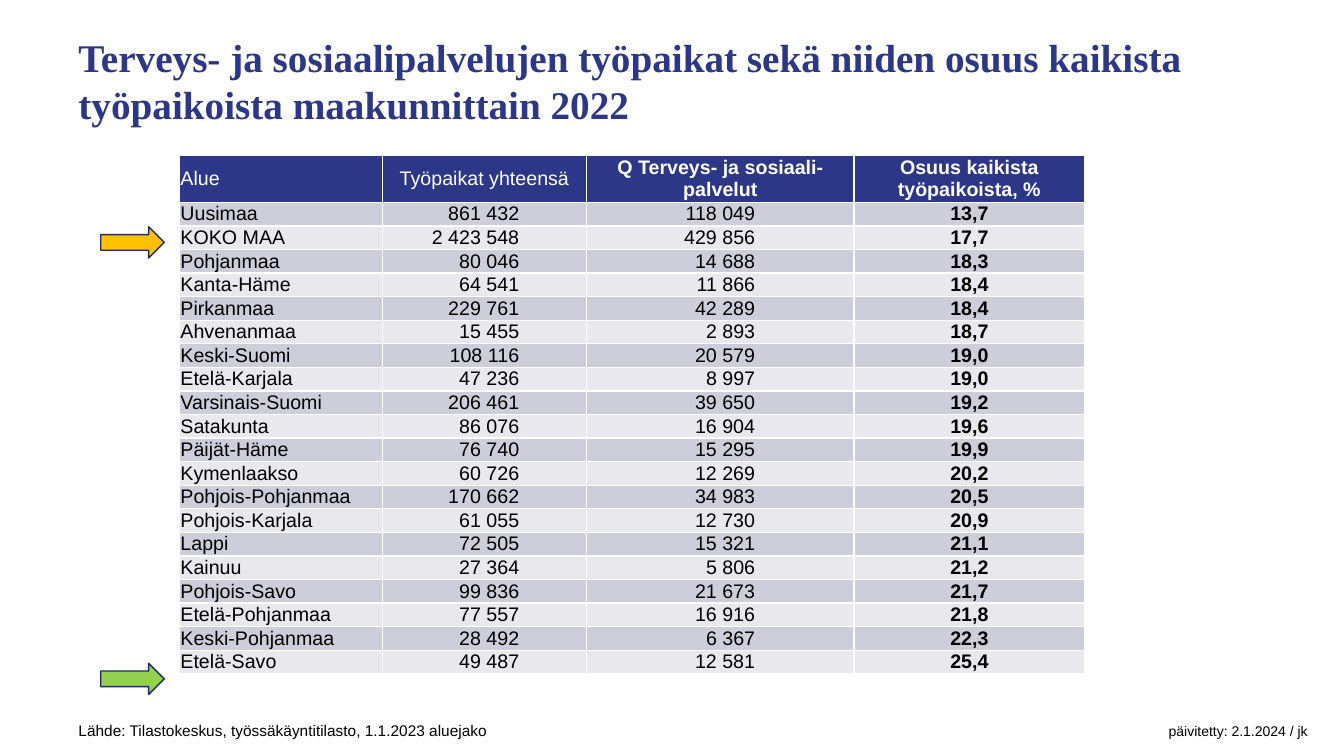
import pptx
import pptx.util
import pptx.dml.color
import pptx.enum.shapes
import pptx.enum.text
import pptx.oxml
import pptx.oxml.ns

Inches, Pt = pptx.util.Inches, pptx.util.Pt
ALIGN = pptx.enum.text.PP_ALIGN
NAVY, WHITE, BLACK = "2D3787", "FFFFFF", "000000"
BANDS = ["CDCED9", "E8E8ED"]
NS = pptx.oxml.ns.nsdecls("a")


def rgb(value):
    return pptx.dml.color.RGBColor.from_string(value)


def style(r, size, color, bold=False, name="Arial"):
    r.font.size, r.font.bold, r.font.name = Pt(size), bold, name
    r.font.color.rgb = rgb(color)


header = ["Alue", "Työpaikat yhteensä", "Q Terveys- ja sosiaali-palvelut", "Osuus kaikista työpaikoista, %"]
regions = [
    ["Uusimaa", "861 432", "118 049", "13,7"],
    ["KOKO MAA", "2 423 548", "429 856", "17,7"],
    ["Pohjanmaa", "80 046", "14 688", "18,3"],
    ["Kanta-Häme", "64 541", "11 866", "18,4"],
    ["Pirkanmaa", "229 761", "42 289", "18,4"],
    ["Ahvenanmaa", "15 455", "2 893", "18,7"],
    ["Keski-Suomi", "108 116", "20 579", "19,0"],
    ["Etelä-Karjala", "47 236", "8 997", "19,0"],
    ["Varsinais-Suomi", "206 461", "39 650", "19,2"],
    ["Satakunta", "86 076", "16 904", "19,6"],
    ["Päijät-Häme", "76 740", "15 295", "19,9"],
    ["Kymenlaakso", "60 726", "12 269", "20,2"],
    ["Pohjois-Pohjanmaa", "170 662", "34 983", "20,5"],
    ["Pohjois-Karjala", "61 055", "12 730", "20,9"],
    ["Lappi", "72 505", "15 321", "21,1"],
    ["Kainuu", "27 364", "5 806", "21,2"],
    ["Pohjois-Savo", "99 836", "21 673", "21,7"],
    ["Etelä-Pohjanmaa", "77 557", "16 916", "21,8"],
    ["Keski-Pohjanmaa", "28 492", "6 367", "22,3"],
    ["Etelä-Savo", "49 487", "12 581", "25,4"],
]

prs = pptx.Presentation()
prs.slide_width, prs.slide_height = Inches(13.33), Inches(7.5)
s = prs.slides.add_slide(prs.slide_layouts[6])
left = Inches(0.68)

tf = s.shapes.add_textbox(left, Inches(0.28), Inches(11.65), Inches(1.05)).text_frame
tf.word_wrap = True
p = tf.paragraphs[0]
p.text = "Terveys- ja sosiaalipalvelujen työpaikat sekä niiden osuus kaikista työpaikoista maakunnittain 2022"
style(p.runs[0], 28, NAVY, True, "Times New Roman")

widths = [2.01, 2.03, 2.65, 2.29]
right_insets = [0.01, 0.67, 0.98, 0.01]
aligns = [ALIGN.LEFT, ALIGN.RIGHT, ALIGN.RIGHT, ALIGN.CENTER]
head_height, body_height = 0.45, 4.54
rows = [header] + regions
table = s.shapes.add_table(
    len(rows), len(widths), Inches(1.78), Inches(1.54),
    Inches(sum(widths)), Inches(head_height + body_height)).table
for column, width in zip(table.columns, widths):
    column.width = Inches(width)
for i, row in enumerate(rows):
    head = i == 0
    table.rows[i].height = Inches(head_height if head else body_height / len(regions))
    for j, text in enumerate(row):
        cell = table.cell(i, j)
        cell.vertical_anchor = pptx.enum.text.MSO_ANCHOR.MIDDLE
        cell.margin_left = Inches(0.01)
        cell.margin_right = Inches(0.01 if head else right_insets[j])
        cell.margin_top = cell.margin_bottom = 0
        cell.fill.solid()
        cell.fill.fore_color.rgb = rgb(NAVY if head else BANDS[(i - 1) % 2])
        p = cell.text_frame.paragraphs[0]
        p.text = text
        p.alignment = ALIGN.CENTER if head and j else aligns[j]
        style(p.runs[0], 14, WHITE if head else BLACK, j == 3 or (head and j == 2))

for top, color in [(2.25, "FFC000"), (6.58, "92D050")]:
    sp = s.shapes.add_shape(
        pptx.enum.shapes.MSO_SHAPE.RIGHT_ARROW, Inches(1), Inches(top), Inches(0.63), Inches(0.31))
    sp.shadow.inherit = False
    sp.fill.solid()
    sp.fill.fore_color.rgb = rgb(color)
    sp.line.color.rgb = rgb("212964")
    sp.line.width = Pt(1)

tf = s.shapes.add_textbox(left, Inches(7.11), Inches(12.6), Inches(0.33)).text_frame
tf.word_wrap = True
p = tf.paragraphs[0]
p._p.get_or_add_pPr().append(pptx.oxml.parse_xml(
    f'<a:tabLst {NS}><a:tab pos="{Inches(12.19)}" algn="r"/></a:tabLst>'))
for text, size in [("Lähde: Tilastokeskus, työssäkäyntitilasto, 1.1.2023 aluejako", 11),
                   ("\tpäivitetty: 2.1.2024 / jk", 10)]:
    r = p.add_run()
    r.text = text
    style(r, size, BLACK)

prs.save("out.pptx")
